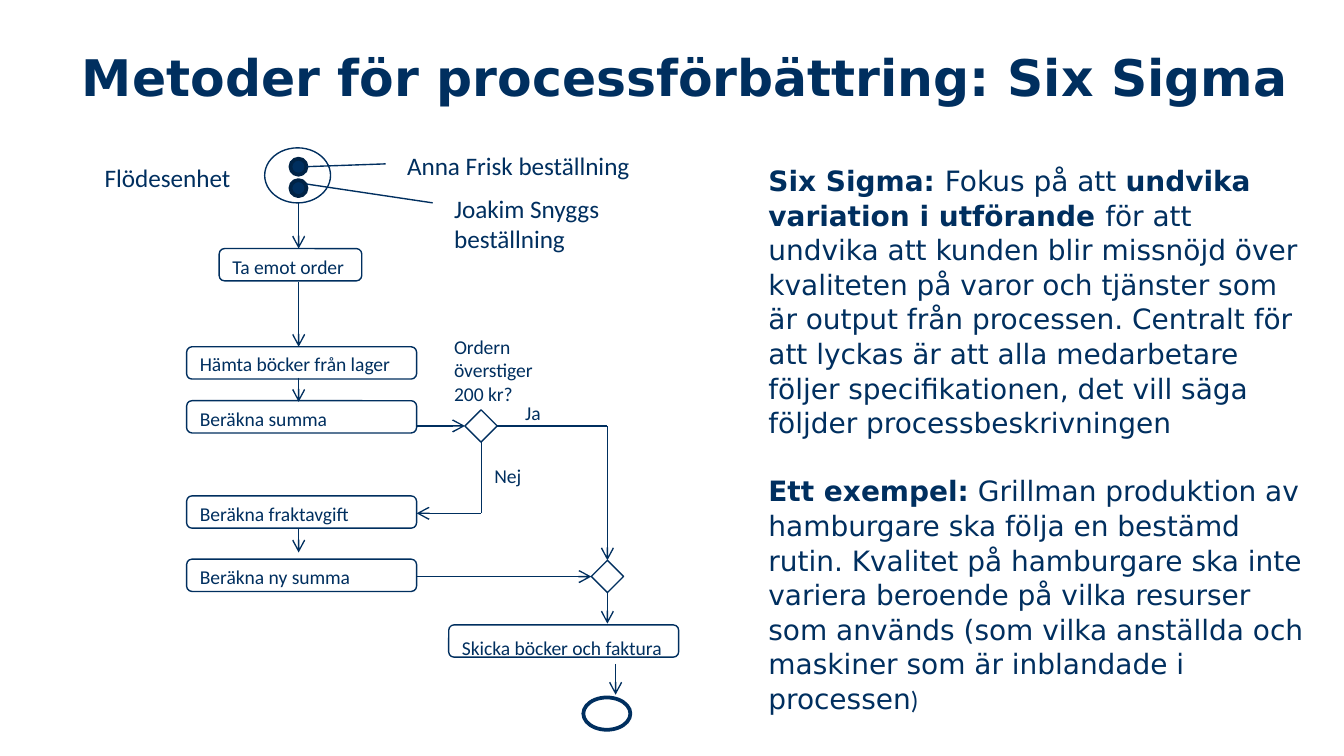
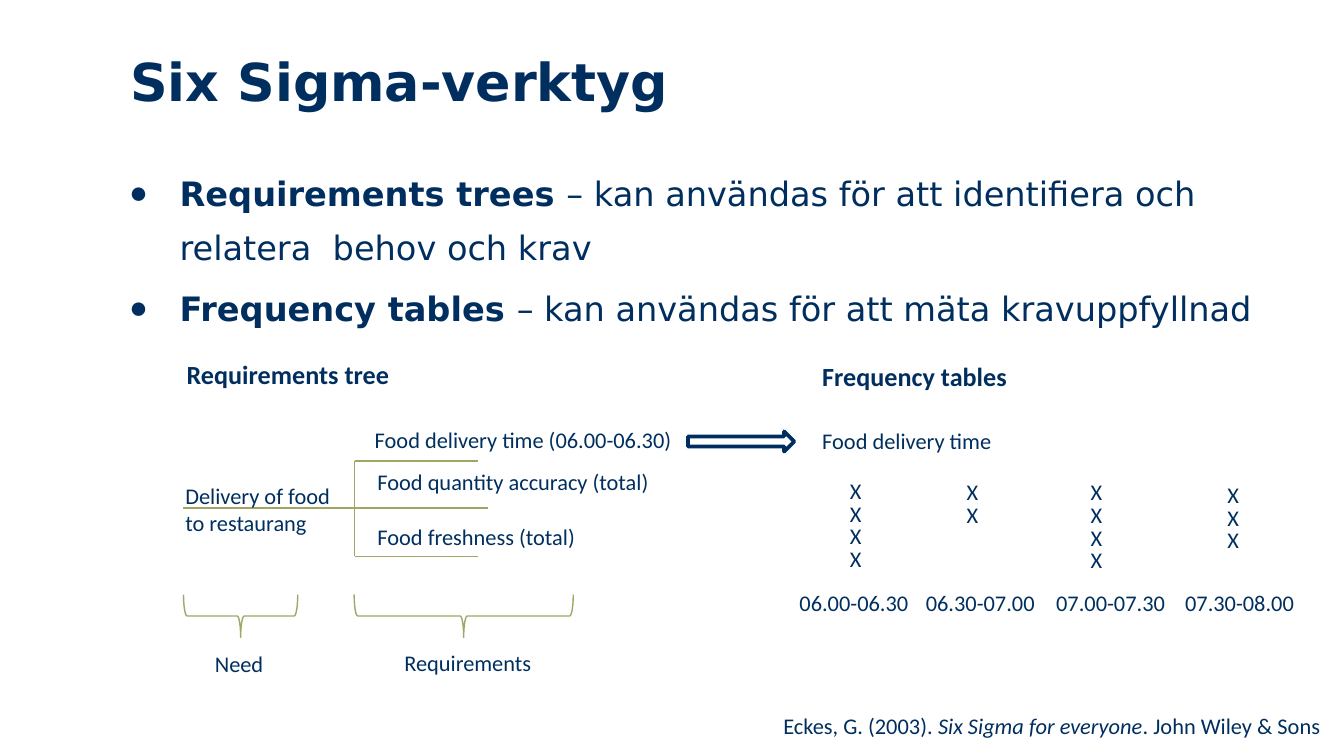
from dataclasses import dataclass
from typing import NamedTuple

from lxml.etree import SubElement as Sub
from pptx import Presentation
from pptx.dml.color import RGBColor
from pptx.enum.shapes import MSO_CONNECTOR as Conn, MSO_SHAPE as Kind
from pptx.enum.text import MSO_ANCHOR as Anchor, MSO_AUTO_SIZE as Auto, PP_ALIGN as Align
from pptx.oxml.ns import qn
from pptx.util import Pt

# Shared look
NAVY = RGBColor(0x00, 0x2F, 0x5F)
INK = RGBColor(0x00, 0x23, 0x46)
OLIVE = RGBColor(0xA1, 0xA6, 0x67)
WHITE = RGBColor(0xFF, 0xFF, 0xFF)
SANS = "DejaVu Sans"
PLAIN = "Calibri"
THIN, THICK = 0.75, 2


class Run(NamedTuple):
    text: str
    size: float = 12
    bold: bool = False
    slant: bool = False
    face: str = PLAIN


class Box(NamedTuple):
    left: float
    top: float
    width: float
    height: float

    def place(self) -> list:
        return [Pt(n) for n in self]


class Line(NamedTuple):
    x1: float
    y1: float
    x2: float
    y2: float
    arrow: bool = True


@dataclass
class Task:
    text: str
    box: Box
    drop: float
    width: float
    lead: float = 0.8


@dataclass
class Slot:
    label: str
    left: float
    mark: float
    top: float
    count: int


# Drawing helpers
def write(para, runs: list[Run]) -> None:
    for item in runs:
        run = para.add_run()
        run.text = item.text
        font = run.font
        font.name, font.size = item.face, Pt(item.size)
        font.bold, font.italic = item.bold, item.slant
        font.color.rgb = NAVY


def add_text(slide, box: Box, paras: list[list[Run]], lead: float | None = None,
             gap: float = 0, wrap: bool = True) -> None:
    frame = slide.shapes.add_textbox(*box.place()).text_frame
    frame.word_wrap = wrap
    frame.auto_size = Auto.SHAPE_TO_FIT_TEXT
    for i, runs in enumerate(paras):
        para = frame.paragraphs[0]
        if i:
            para = frame.add_paragraph()
            para.space_before = Pt(gap)
        if lead:
            para.line_spacing = lead
        write(para, runs)


def add_shape(slide, kind: Kind, box: Box, fill: RGBColor | None = WHITE,
              line: RGBColor = NAVY, width: float = THIN):
    shape = slide.shapes.add_shape(kind, *box.place())
    shape.shadow.inherit = False
    if fill is None:
        shape.fill.background()
    else:
        shape.fill.solid()
        shape.fill.fore_color.rgb = fill
    shape.line.color.rgb = line
    shape.line.width = Pt(width)
    return shape


def add_line(slide, line: Line, tint: RGBColor = NAVY) -> None:
    ends = [Pt(n) for n in line[:4]]
    link = slide.shapes.add_connector(Conn.STRAIGHT, *ends)
    link.line.color.rgb = tint
    link.line.width = Pt(THIN)
    props = link._element.spPr
    if line.arrow:
        Sub(props.find(qn("a:ln")), qn("a:tailEnd"), type="arrow")
    Sub(props, qn("a:effectLst"))


def set_title(slide, text: str, box: Box, size: float) -> None:
    title = slide.shapes.title
    title.left, title.top, title.width, title.height = box.place()
    frame = title.text_frame
    frame.word_wrap, frame.auto_size = True, Auto.NONE
    frame.vertical_anchor, frame.margin_top = Anchor.TOP, Pt(6)
    para = frame.paragraphs[0]
    para.alignment = Align.LEFT
    write(para, [Run(text, size, True, face=SANS)])


def set_list(slide, box: Box, items: list[list[Run]]) -> None:
    body = slide.placeholders[1]
    body.left, body.top, body.width, body.height = box.place()
    frame = body.text_frame
    frame.word_wrap, frame.auto_size = True, Auto.NONE
    frame.vertical_anchor = Anchor.TOP
    for i, runs in enumerate(items):
        para = frame.add_paragraph() if i else frame.paragraphs[0]
        props = para._p.get_or_add_pPr()
        props.set("marL", str(Pt(27)))
        props.set("indent", str(-Pt(27)))
        Sub(props, qn("a:buSzPct"), val="93000")
        Sub(props, qn("a:buChar"), char="●")
        para.line_spacing = Pt(29)
        para.space_before = Pt(3.6 if i else 0)
        write(para, runs)


# Slide 1: order flow
def six_sigma(deck) -> None:
    slide = deck.slides.add_slide(deck.slide_layouts[5])
    set_title(slide, "Metoder för processförbättring: Six Sigma",
              Box(36.7, 18.7, 672.5, 67.7), 27)

    left, wide, high = 100, 123.2, 17.3
    tasks = [
        Task("Ta emot order", Box(117.4, 133.2, 76.4, high), 4.3, 76.4, 0.6),
        Task("Hämta böcker från lager", Box(left, 185.8, wide, high), 1.4, 127.4),
        Task("Beräkna summa", Box(left, 214.7, wide, high), 2.1, 89.3),
        Task("Beräkna fraktavgift", Box(left, 265.7, wide, high), 2.1, 102.2),
        Task("Beräkna ny summa", Box(left, 299.6, wide, high), 2.1, 102.2),
        Task("Skicka böcker och faktura", Box(240.4, 334.8, wide, high), 5, wide),
    ]
    for task in tasks:
        add_shape(slide, Kind.ROUNDED_RECTANGLE, task.box)
        spot = Box(task.box.left, task.box.top + task.drop, task.width, high)
        add_text(slide, spot, [[Run(task.text, 10.5)]], task.lead)

    # Choices, flow unit and end
    for x, y in [(249.1, 219.6), (316.8, 300.2)]:
        add_shape(slide, Kind.DIAMOND, Box(x, y, high, high))
    add_shape(slide, Kind.OVAL, Box(141.8, 79.2, 35.3, 29.5))
    for y in (85, 96.5):
        add_shape(slide, Kind.OVAL, Box(155.6, y, 8.6, 8.6), NAVY, INK, THICK)
    add_shape(slide, Kind.OVAL, Box(312.5, 373.7, 25.2, high), width=THICK)

    # Flow lines
    main, turn, side = 160, 257.8, 325.4
    edge = left + wide
    lines = [Line(main, a, main, b) for a, b in
             [(108.7, 133.2), (151.2, 185.8), (202.3, 215.3), (283, 296)]]
    lines += [
        Line(edge, 228.2, 249.1, 228.2),
        Line(265.7, 228.2, side, 228.2, False),
        Line(side, 228.2, side, 300.2),
        Line(turn, 236.9, turn, 275, False),
        Line(turn, 275, edge, 275),
        Line(edge, 308.9, 316.8, 308.9),
        Line(side, 317.5, side, 334.1),
        Line(329.8, 355.7, 329.8, 372.2),
        Line(164.2, 89.3, 206.6, 87.8, False),
        Line(164.2, 98.6, 231.8, 108.7, False),
    ]
    for line in lines:
        add_line(slide, line)

    # Labels
    labels = [
        ("Flödesenhet", 13.5, Box(49, 83.5, 85, 23.8)),
        ("Anna Frisk beställning", 13.5, Box(211, 77, 170, 23.8)),
        ("Joakim Snyggs beställning", 13.5, Box(236.2, 100.1, 110.9, 40.3)),
        ("Ordern överstiger 200 kr?", 10.5, Box(236.2, 175.7, 59.8, 45.4)),
        ("Ja", 10.5, Box(274.3, 211, 59.8, 20.2)),
        ("Nej", 10.5, Box(257.8, 244.8, 59.8, 20.2)),
    ]
    for text, size, box in labels:
        add_text(slide, box, [[Run(text, size)]])

    # Explanation
    def bold(text: str) -> Run:
        return Run(text, 15, True, face=SANS)

    def plain(text: str) -> Run:
        return Run(text, 15, face=SANS)

    add_text(slide, Box(404.6, 83.5, 304.6, 298), [
        [bold("Six Sigma: "), plain("Fokus på att "),
         bold("undvika variation i utförande "),
         plain("för att undvika att kunden blir missnöjd över kvaliteten på "
               "varor och tjänster som är output från processen. Centralt för "
               "att lyckas är att alla medarbetare följer specifikationen, det "
               "vill säga följder processbeskrivningen")],
        [bold("Ett exempel:"),
         plain(" Grillman produktion av hamburgare ska följa en bestämd rutin. "
               "Kvalitet på hamburgare ska inte variera beroende på vilka "
               "resurser som används (som vilka anställda och maskiner som är "
               "inblandade i processen"),
         Run(")", 13.5)],
    ], lead=1.03, gap=18)


# Slide 2: requirements tree and frequency table
def tools(deck) -> None:
    slide = deck.slides.add_slide(deck.slide_layouts[1])
    set_title(slide, "Six Sigma-verktyg", Box(62.6, 20.2, 539.3, 46.8), 28)
    set_list(slide, Box(62, 81.4, 657, 275), [
        [Run(head, 18, True, face=SANS), Run(rest, 18, face=SANS)]
        for head, rest in [
            ("Requirements trees ",
             "– kan användas för att identifiera och relatera  behov och krav"),
            ("Frequency tables ", "– kan användas för att mäta kravuppfyllnad"),
        ]])

    # Tree
    stem, low, deep = 190, 247, 298
    for line in [Line(98, 272.2, 261.4, 272.2, False),
                 Line(stem, low, stem, deep, False),
                 Line(stem, low, 256.3, low, False),
                 Line(stem, deep, 256.3, deep, False)]:
        add_line(slide, line, OLIVE)
    for mid, span in [(128.9, 61.2), (248.4, 117.4)]:
        box = Box(mid - 11.5, 330 - span / 2, 23, span)
        brace = add_shape(slide, Kind.RIGHT_BRACE, box, None, OLIVE)
        brace.rotation = 90
    add_shape(slide, Kind.RIGHT_ARROW, Box(368.6, 231.1, 56.9, 10.8), width=THICK)

    # Labels
    high = 21.6
    for text, x, y in [("Requirements tree", 92.9, 188.6),
                       ("Frequency tables", 433.4, 189.4)]:
        add_text(slide, Box(x, y, 143.3, 24.5), [[Run(text, 14, True)]])
    for text, box in [
        ("Delivery of food to restaurang", Box(92.2, 254.9, 93.6, 36)),
        ("Food delivery time (06.00-06.30)", Box(193.7, 224.6, 188, high)),
        ("Food quantity accuracy (total)", Box(195.1, 247, 166.3, high)),
        ("Food freshness (total)", Box(195.1, 276.5, 142.6, high)),
        ("Need", Box(108, 344.9, 142.6, high)),
        ("Requirements", Box(209.5, 344.2, 142.6, high)),
        ("Food delivery time", Box(433.4, 225.4, 106.6, high)),
    ]:
        add_text(slide, box, [[Run(text)]])

    # Frequency marks
    for slot in [Slot("06.00-06.30", 421.2, 448.2, 252, 4),
                 Slot("06.30-07.00", 488.9, 510.8, 252.7, 2),
                 Slot("07.00-07.30", 558.7, 577.2, 252.7, 4),
                 Slot("07.30-08.00", 627.8, 650.5, 254.2, 3)]:
        add_text(slide, Box(slot.left, 312.2, 73.4, high), [[Run(slot.label)]],
                 wrap=False)
        for row in range(slot.count):
            box = Box(slot.mark, slot.top + 12.2 * row, 18.7, high)
            add_text(slide, box, [[Run("X")]])

    # Citation
    add_text(slide, Box(412.6, 378, 307, high), [[
        Run("Eckes, G. (2003). "), Run("Six Sigma for everyone", slant=True),
        Run(". John Wiley & Sons")]])


def main() -> None:
    deck = Presentation()
    deck.slide_width, deck.slide_height = Pt(720), Pt(405)
    six_sigma(deck)
    tools(deck)
    deck.save("out.pptx")


if __name__ == "__main__":
    main()
